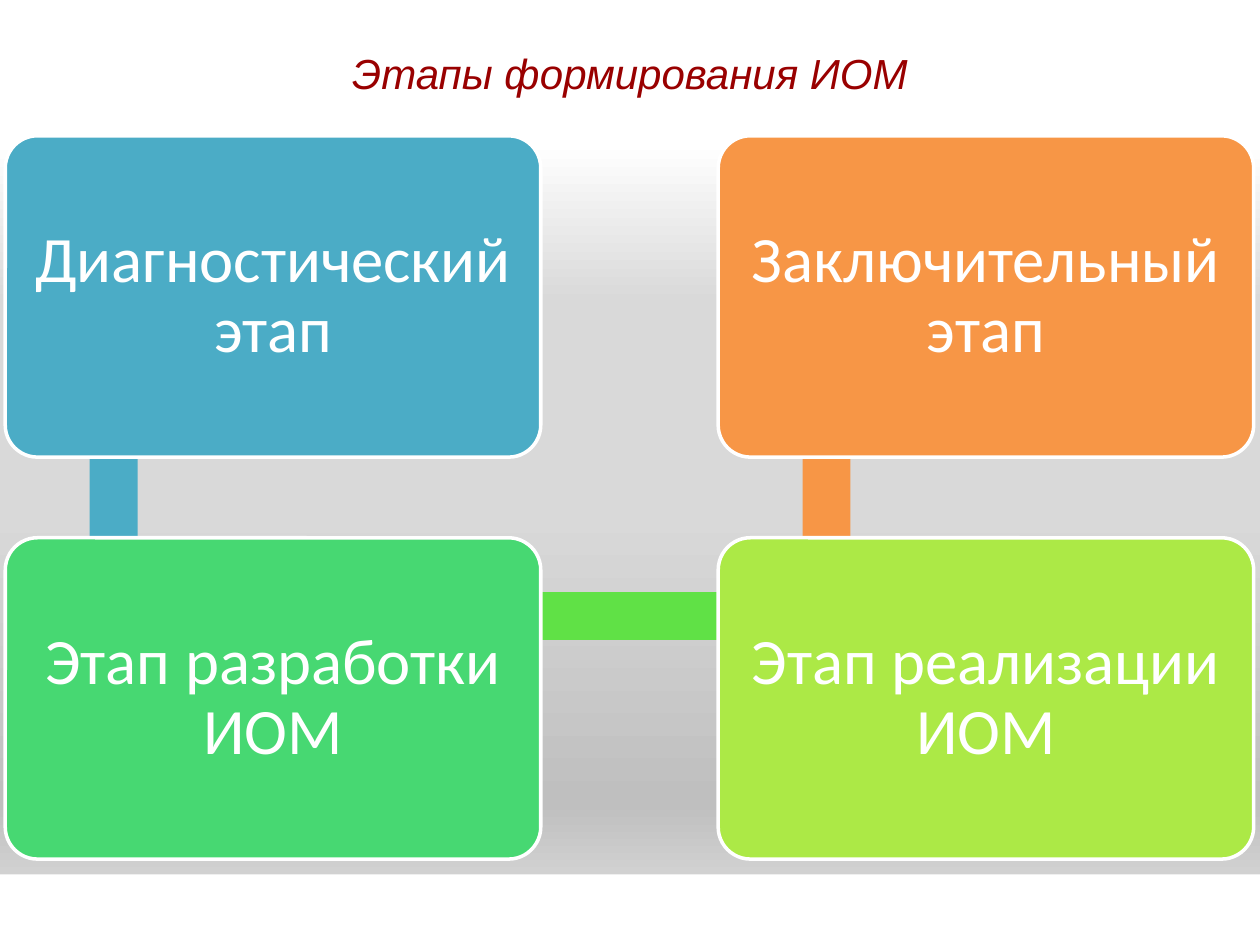
import pptx
import pptx.dml.color
import pptx.enum.shapes
import pptx.enum.text
import pptx.oxml
import pptx.oxml.ns
import pptx.util

Pt = pptx.util.Pt
SHAPES = pptx.enum.shapes.MSO_SHAPE

COLORS = {
    "white": "FFFFFF", "title": "990000", "blue": "4BACC6", "green": "47D872",
    "link": "60E146", "lime": "ACE946", "orange": "F79646",
}
BACKDROP = [(0, "FFFFFF"), (15, "FFFFFF"), (32, "D9D9D9"),
            (54, "D9D9D9"), (85, "BFBFBF"), (100, "E6E6E6")]
WIDTH, HEIGHT = 720, 540
COLUMNS, ROWS = (3, 410.4), (77.6, 307.3)
CARD_WIDTH, CARD_HEIGHT = 306, 183.6
BAR = 27.4
CARDS = [
    ("Диагностический этап", "blue", 0, 0),
    ("Этап разработки ИОМ", "green", 0, 1),
    ("Этап реализации ИОМ", "lime", 1, 1),
    ("Заключительный этап", "orange", 1, 0),
]


def rgb(name):
    """Return the named colour."""
    return pptx.dml.color.RGBColor.from_string(COLORS[name])


def write(box, text, font="Calibri", size=37, color="white", italic=False, spacing=None, margin=10.8):
    """Put centred text into a shape."""
    frame = box.text_frame
    frame.word_wrap = True
    frame.vertical_anchor = pptx.enum.text.MSO_ANCHOR.MIDDLE
    frame.margin_left = frame.margin_right = Pt(margin)
    frame.margin_top = frame.margin_bottom = Pt(margin)
    para = frame.paragraphs[0]
    para.alignment = pptx.enum.text.PP_ALIGN.CENTER
    if spacing:
        para.line_spacing = spacing
    span = para.add_run()
    span.text = text
    span.font.name = font
    span.font.size = Pt(size)
    span.font.italic = italic
    span.font.color.rgb = rgb(color)


class Painter:
    """Hold the style and the current slide."""

    def __init__(self, page):
        """Keep the slide to draw on."""
        self.page = page

    def backdrop(self, stops):
        """Fill the background with a vertical gradient."""
        fill = self.page.background.fill
        fill.gradient()
        fill.gradient_angle = 270
        qn = pptx.oxml.ns.qn
        stop_list = next(self.page.element.iter(qn("a:gsLst")))
        for stop in list(stop_list):
            stop_list.remove(stop)
        for position, color in stops:
            stop_list.append(pptx.oxml.parse_xml(
                f'<a:gs {pptx.oxml.ns.nsdecls("a")} pos="{position * 1000}">'
                f'<a:srgbClr val="{color}"/></a:gs>'))

    def block(self, left, top, width, height, color, kind=SHAPES.RECTANGLE):
        """Draw a plain filled shape."""
        box = self.page.shapes.add_shape(kind, Pt(left), Pt(top), Pt(width), Pt(height))
        box.shadow.inherit = False
        box.fill.solid()
        box.fill.fore_color.rgb = rgb(color)
        box.line.fill.background()
        return box

    def card(self, text, color, column, row):
        """Draw a rounded stage card at its grid place."""
        box = self.block(COLUMNS[column], ROWS[row], CARD_WIDTH, CARD_HEIGHT,
                         color, SHAPES.ROUNDED_RECTANGLE)
        box.adjustments[0] = 0.1
        box.line.color.rgb = rgb("white")
        box.line.width = Pt(2)
        write(box, text, spacing=0.9)


def main():
    """Build and save the slide."""
    deck = pptx.Presentation()
    deck.slide_width, deck.slide_height = Pt(WIDTH), Pt(HEIGHT)
    painter = Painter(deck.slides.add_slide(deck.slide_layouts[6]))
    painter.backdrop(BACKDROP)
    painter.block(0, 499.7, WIDTH, HEIGHT - 499.7, "white")
    heading = painter.block(0, 0, WIDTH, 82.8, "white")
    write(heading, "Этапы формирования ИОМ", font="Arial", size=24,
          color="title", italic=True, margin=3.6)
    for left, color in zip(COLUMNS, ("blue", "orange")):
        painter.block(left + 48.2, ROWS[0] + 45, BAR, 228.2, color)
    painter.block(COLUMNS[0] + 62.5, ROWS[1] + 31, 406, BAR, "link")
    for card in CARDS:
        painter.card(*card)
    deck.save("out.pptx")


if __name__ == "__main__":
    main()
